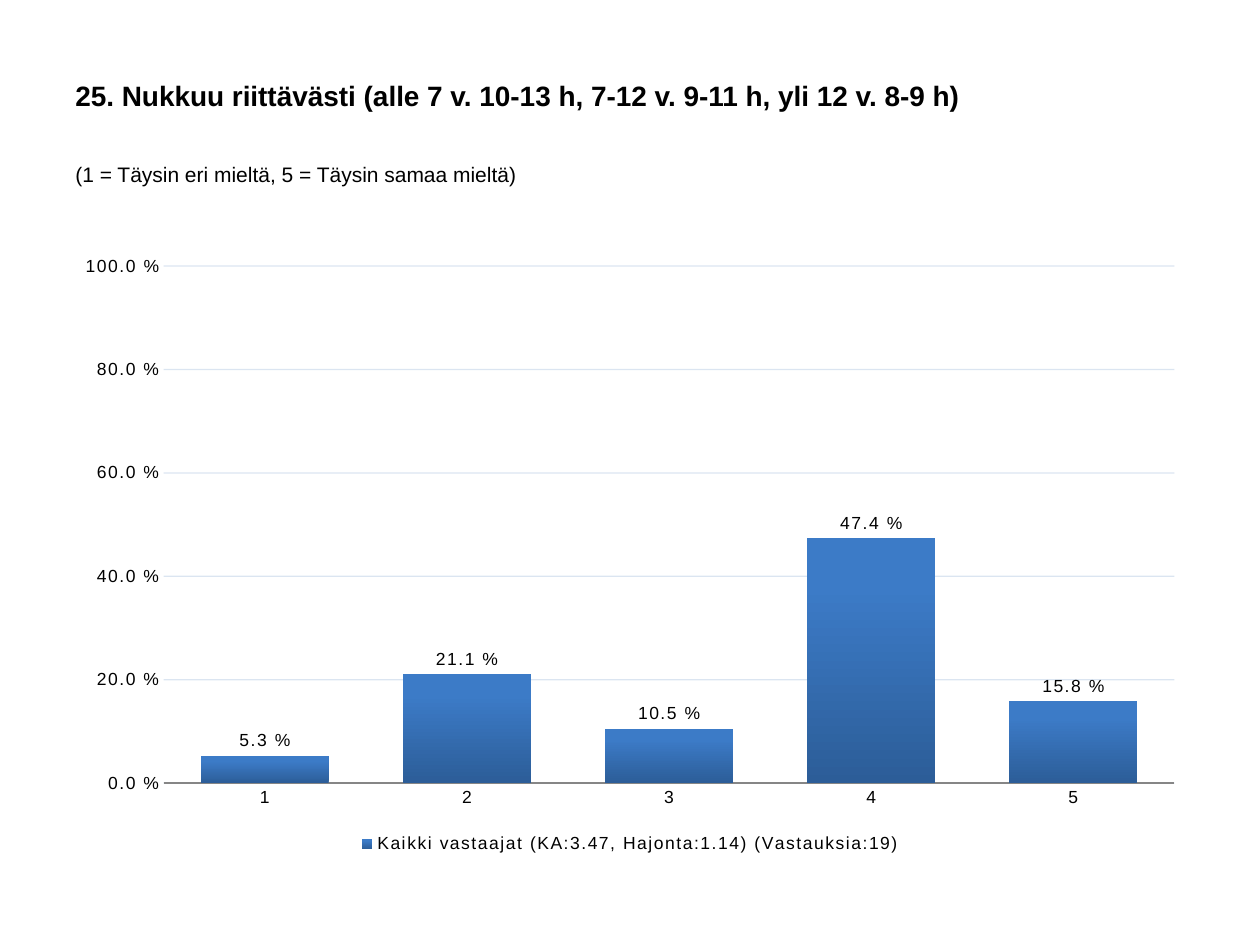
from lxml import etree
from pptx import Presentation
from pptx import util as u
from pptx.chart.data import CategoryChartData
from pptx.dml.color import RGBColor
from pptx.enum import chart as ch
from pptx.enum import text
from pptx.oxml.ns import qn

PX = u.Inches(1) // 126
BLACK = RGBColor(0x00, 0x00, 0x00)
BAR_TOP = RGBColor(0x3C, 0x7B, 0xC7)
BAR_BOTTOM = RGBColor(0x2C, 0x5D, 0x98)
GRID = RGBColor(0x4F, 0x81, 0xBD)
AXIS = RGBColor(0x86, 0x86, 0x86)
PERCENT = "0.0\\ %"

TITLE = "25. Nukkuu riittävästi (alle 7 v. 10-13 h, 7-12 v. 9-11 h, yli 12 v. 8-9 h)"
SCALE_NOTE = "(1 = Täysin eri mieltä, 5 = Täysin samaa mieltä)"
SERIES = "Kaikki vastaajat (KA:3.47, Hajonta:1.14) (Vastauksia:19)"
SHARES = {"1": 0.053, "2": 0.211, "3": 0.105, "4": 0.474, "5": 0.158}


def px(*lengths):
    return [length * PX for length in lengths]


def set_format(target, values):
    for name, value in values.items():
        setattr(target, name, value)


def set_font(font, size, bold=False):
    set_format(font, {"name": "Arial", "size": u.Pt(size), "bold": bold})
    font.color.rgb = BLACK


def add_text(slide, place, words, size, bold=False,
             anchor=text.MSO_ANCHOR.TOP, space_before=0):
    box = slide.shapes.add_textbox(*px(*place))
    set_format(box.text_frame, {"word_wrap": True, "vertical_anchor": anchor})
    para = box.text_frame.paragraphs[0]
    para.space_before = u.Pt(space_before)
    span = para.add_run()
    span.text = words
    set_font(span.font, size, bold)


def style_axes(chart):
    categories, values = chart.category_axis, chart.value_axis
    for axis in (categories, values):
        set_format(axis, {"major_tick_mark": ch.XL_TICK_MARK.NONE,
                          "minor_tick_mark": ch.XL_TICK_MARK.NONE})
        set_font(axis.tick_labels.font, 10)
    categories.format.line.color.rgb = AXIS
    set_format(values, {"minimum_scale": 0, "maximum_scale": 1, "major_unit": 0.2,
                        "has_major_gridlines": True})
    set_format(values.tick_labels, {"number_format": PERCENT,
                                    "number_format_is_linked": False})
    values.format.line.fill.background()
    grid = values.major_gridlines.format.line
    grid.width = u.Pt(0.75)
    grid.color.rgb = GRID
    for color in values.major_gridlines._xAx.iterfind(
            f"{qn('c:majorGridlines')}//{qn('a:srgbClr')}"):
        etree.SubElement(color, qn("a:alpha"), val="20000")


def style_bars(plot):
    set_format(plot, {"gap_width": 58, "vary_by_categories": False,
                      "has_data_labels": True})
    labels = plot.data_labels
    set_format(labels, {"show_value": True, "number_format": PERCENT,
                        "number_format_is_linked": False,
                        "position": ch.XL_LABEL_POSITION.OUTSIDE_END})
    set_font(labels.font, 10)
    fill = plot.series[0].format.fill
    fill.gradient()
    fill.gradient_angle = 90
    for stop, position, color in zip(fill.gradient_stops, (0, 0.8),
                                     (BAR_BOTTOM, BAR_TOP)):
        stop.position = position
        stop.color.rgb = color


def space_letters(chart):
    """Widen all chart text by one point per letter."""
    for props in chart._chartSpace.iter(qn("a:defRPr")):
        props.set("spc", "100")


def add_share_chart(slide, place):
    data = CategoryChartData(number_format=PERCENT)
    data.categories = list(SHARES)
    data.add_series(SERIES, list(SHARES.values()))
    frame = slide.shapes.add_chart(ch.XL_CHART_TYPE.COLUMN_CLUSTERED, *px(*place), data)
    chart = frame.chart
    set_format(chart, {"has_title": False, "has_legend": True})
    set_font(chart.font, 10)
    set_format(chart.legend, {"position": ch.XL_LEGEND_POSITION.BOTTOM,
                              "include_in_layout": False})
    set_font(chart.legend.font, 10)
    style_axes(chart)
    style_bars(chart.plots[0])
    space_letters(chart)


def main():
    deck = Presentation()
    deck.slide_width, deck.slide_height = px(1260, 945)
    slide = deck.slides.add_slide(deck.slide_layouts[6])
    add_text(slide, (63, 46, 1134, 99), TITLE, 16, bold=True,
             anchor=text.MSO_ANCHOR.MIDDLE)
    add_text(slide, (63, 155, 1134, 74), SCALE_NOTE, 12, space_before=2.4)
    add_share_chart(slide, (63, 244, 1134, 615))
    deck.save("out.pptx")


if __name__ == "__main__":
    main()
